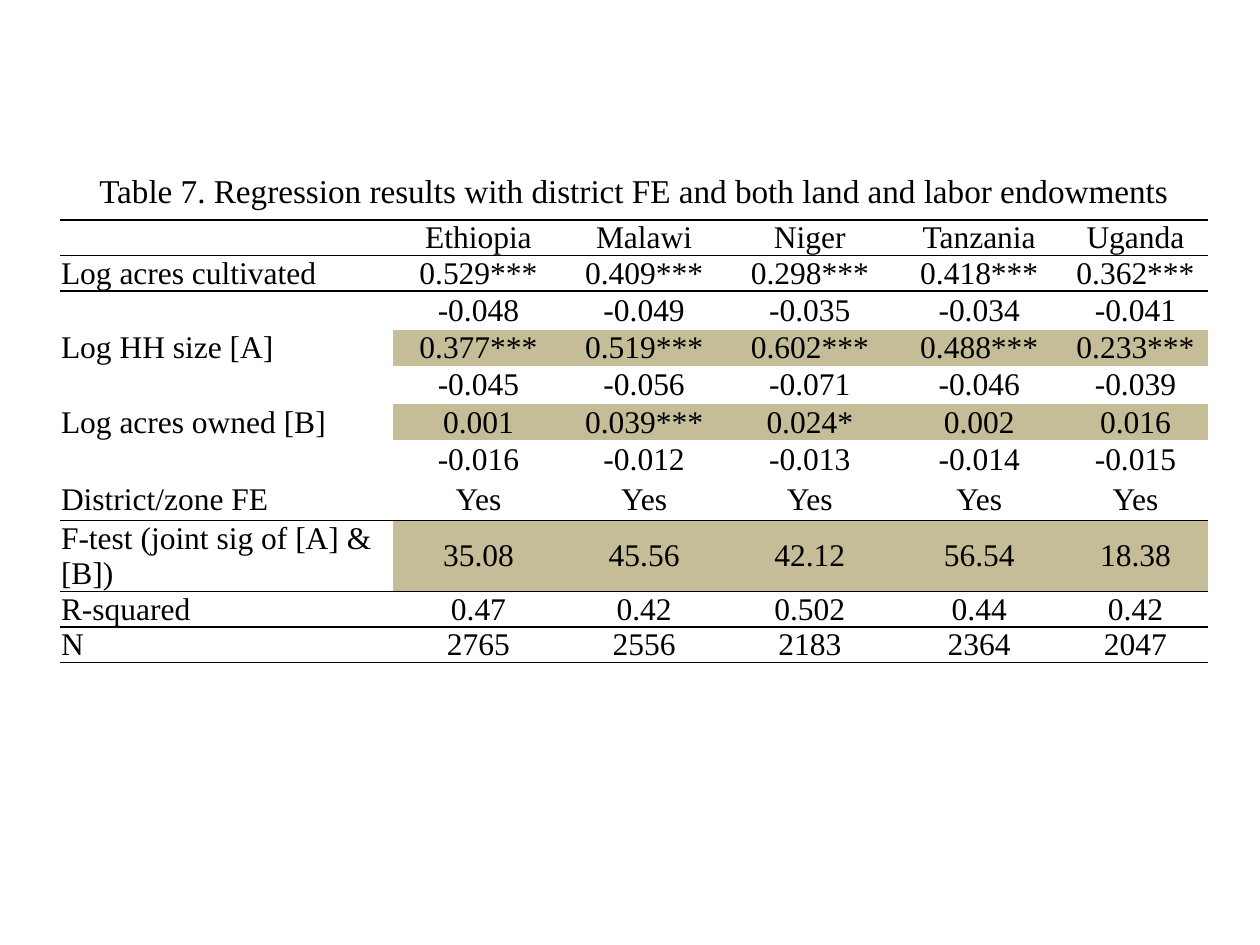
"""Build a slide with a table of regression results."""
from typing import NamedTuple

from lxml.etree import SubElement as Sub
from pptx import Presentation
from pptx.dml.color import RGBColor
from pptx.enum.text import MSO_ANCHOR as Anchor, PP_ALIGN as Align
from pptx.oxml.ns import qn
from pptx.util import Cm, Pt

INK = "000000"
TAN = "C4BD97"
PLAIN = "{2D5ABB26-0587-4C30-8999-92F81FD0307C}"
WIDTHS = (6.71, 3.45, 3.23, 3.45, 3.38, 2.92)


class Row(NamedTuple):
    label: str
    cells: str
    high: float = 0.72
    fill: str = ""
    top: bool = False
    base: bool = False


ROWS = (
    Row("", "Ethiopia Malawi Niger Tanzania Uganda", top=True, base=True),
    Row("Log acres cultivated", "0.529*** 0.409*** 0.298*** 0.418*** 0.362***", top=True),
    Row("", "-0.048 -0.049 -0.035 -0.034 -0.041", 0.78),
    Row("Log HH size [A]", "0.377*** 0.519*** 0.602*** 0.488*** 0.233***", fill=TAN),
    Row("", "-0.045 -0.056 -0.071 -0.046 -0.039", 0.78),
    Row("Log acres owned [B]", "0.001 0.039*** 0.024* 0.002 0.016", fill=TAN),
    Row("", "-0.016 -0.012 -0.013 -0.014 -0.015", 0.78),
    Row("District/zone FE", "Yes Yes Yes Yes Yes", 0.84, base=True),
    Row("F-test (joint sig of [A] & [B])", "35.08 45.56 42.12 56.54 18.38",
        1.43, TAN, True, True),
    Row("R-squared", "0.47 0.42 0.502 0.44 0.42", top=True),
    Row("N", "2765 2556 2183 2364 2047", base=True),
)


def color(code: str) -> RGBColor:
    """Turn a hex string into a colour."""
    return RGBColor.from_string(code)


def write(cell, text: str, *, size: float = 18, align=Align.CENTER,
          font: str = "Times New Roman", ink: str = INK) -> None:
    """Put formatted text in a cell."""
    cell.margin_left = cell.margin_right = Cm(0.02)
    cell.margin_top = Cm(0.01)
    cell.margin_bottom = 0
    cell.vertical_anchor = Anchor.MIDDLE
    para = cell.text_frame.paragraphs[0]
    para.alignment = align
    if not text:
        Sub(para._p, qn("a:endParaRPr"), sz=str(size * 100 // 2))
        return
    run = para.add_run()
    run.text = text
    run.font.name = font
    run.font.size = Pt(size)
    run.font.color.rgb = color(ink)


def rule(cell, side: str) -> None:
    """Draw a thin line on the top (T) or bottom (B) of a cell."""
    line = Sub(cell._tc.get_or_add_tcPr(), qn(f"a:ln{side}"), w=str(Pt(1)))
    Sub(Sub(line, qn("a:solidFill")), qn("a:srgbClr"), val=INK)


def style(cell, fill: str, top: bool, base: bool) -> None:
    """Set the lines and fill of a cell."""
    if top:
        rule(cell, "T")
    if base:
        rule(cell, "B")
    if fill:
        cell.fill.solid()
        cell.fill.fore_color.rgb = color(fill)
    else:
        cell.fill.background()


def draw(table, num: int, row: Row) -> None:
    """Fill one row of the table."""
    table.rows[num].height = Cm(row.high)
    for col, text in enumerate((row.label, *row.cells.split())):
        cell = table.cell(num, col)
        write(cell, text, align=Align.CENTER if col else Align.LEFT)
        style(cell, row.fill if col else "", row.top, row.base)


def main() -> None:
    """Build and save the slide."""
    deck = Presentation()
    deck.slide_width, deck.slide_height = Cm(25.4), Cm(19.05)
    slide = deck.slides.add_slide(deck.slide_layouts[6])
    high = 1.1 + sum(row.high for row in ROWS)
    frame = slide.shapes.add_table(len(ROWS) + 1, len(WIDTHS), Cm(1.21), Cm(3.33),
                                   Cm(sum(WIDTHS)), Cm(high))
    table = frame.table
    table.first_row = table.horz_banding = False
    table._tbl.tblPr.find(qn("a:tableStyleId")).text = PLAIN
    for col, wide in zip(table.columns, WIDTHS):
        col.width = Cm(wide)

    table.rows[0].height = Cm(1.1)
    head = table.cell(0, 0)
    head.merge(table.cell(0, len(WIDTHS) - 1))
    write(head, "Table 7. Regression results with district FE and both land "
          "and labor endowments", size=19)
    for cell in table.rows[0].cells:
        style(cell, "", False, True)
    for num, row in enumerate(ROWS, 1):
        draw(table, num, row)
    deck.save("out.pptx")


if __name__ == "__main__":
    main()
